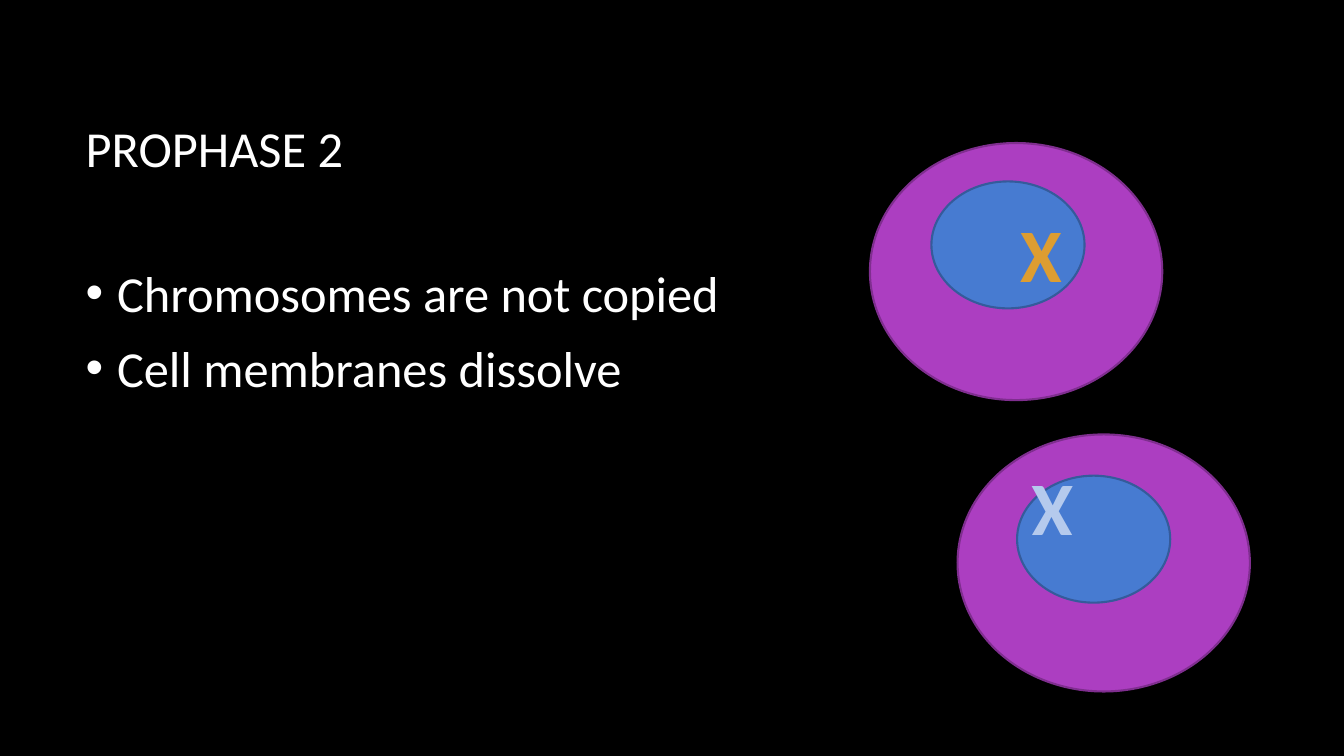
from lxml.etree import SubElement
from pptx import Presentation
from pptx.dml.color import RGBColor
from pptx.enum.shapes import MSO_SHAPE
from pptx.enum.text import MSO_ANCHOR, MSO_AUTO_SIZE, PP_ALIGN
from pptx.oxml.ns import qn
from pptx.util import Pt

BLACK = RGBColor(0x00, 0x00, 0x00)
WHITE = RGBColor(0xFF, 0xFF, 0xFF)
PURPLE = RGBColor(0xAC, 0x3E, 0xC1)
DARK_PURPLE = RGBColor(0x7F, 0x2E, 0x8F)
BLUE = RGBColor(0x47, 0x7B, 0xD1)
DARK_BLUE = RGBColor(0x35, 0x5B, 0x9B)
PALE_BLUE = RGBColor(0xB5, 0xCA, 0xED)
ORANGE = RGBColor(0xDD, 0x9D, 0x31)

CELL_SIZE = (208.8, 183.6)
NUCLEUS_SIZE = (109.4, 90.7)


def write(para, text, size=36, color=WHITE, bold=False, align=PP_ALIGN.LEFT, outline=None):
    """Write text into a paragraph with the given format."""
    para.alignment = align
    span = para.add_run()
    span.text = text
    font = span.font
    font.name, font.size, font.bold = "Calibri", Pt(size), bold
    font.color.rgb = color
    if outline:
        line_color, width = outline
        line = SubElement(font._element, qn("a:ln"), w=str(Pt(width)))
        fill = SubElement(line, qn("a:solidFill"))
        SubElement(fill, qn("a:srgbClr"), val=str(line_color))
        font._element.insert(0, line)


class Slide:
    """Hold the style and the current page, and draw its elements."""

    def __init__(self, deck):
        self.page = deck.slides.add_slide(deck.slide_layouts[5])
        background = self.page.background.fill
        background.solid()
        background.fore_color.rgb = BLACK

    def title(self, text, left, top, width, height):
        box = self.page.shapes.title
        box.left, box.top, box.width, box.height = map(Pt, (left, top, width, height))
        frame = box.text_frame
        frame.auto_size = MSO_AUTO_SIZE.NONE
        frame.vertical_anchor = MSO_ANCHOR.MIDDLE
        write(frame.paragraphs[0], text)

    def text_box(self, left, top, width, height):
        box = self.page.shapes.add_textbox(*map(Pt, (left, top, width, height)))
        box.text_frame.word_wrap = True
        return box

    def bullets(self, items, left, top, width, height, indent=22.5):
        frame = self.text_box(left, top, width, height).text_frame
        frame.vertical_anchor = MSO_ANCHOR.MIDDLE
        for index, item in enumerate(items):
            para = frame.add_paragraph() if index else frame.paragraphs[0]
            properties = para._p.get_or_add_pPr()
            properties.set("marL", str(Pt(indent)))
            properties.set("indent", str(-Pt(indent)))
            para.space_after = Pt(10)
            SubElement(properties, qn("a:buFont"), typeface="Arial")
            SubElement(properties, qn("a:buChar"), char="•")
            write(para, item)

    def ellipse(self, left, top, size, color, line_color):
        shape = self.page.shapes.add_shape(MSO_SHAPE.OVAL, *map(Pt, (left, top, *size)))
        shape.shadow.inherit = False
        shape.fill.solid()
        shape.fill.fore_color.rgb = color
        shape.line.color.rgb = line_color
        shape.line.width = Pt(1.5)

    def chromosome(self, left, top, width, color, outline, rotation):
        box = self.text_box(left, top, width, 72.7)
        box.rotation = rotation
        box.text_frame.auto_size = MSO_AUTO_SIZE.SHAPE_TO_FIT_TEXT
        write(box.text_frame.paragraphs[0], "X", size=54, color=color, bold=True,
              align=PP_ALIGN.CENTER, outline=outline)

    def cell(self, cell_at, nucleus_at, chromosome_at, color, outline, rotation=0):
        self.ellipse(*cell_at, CELL_SIZE, PURPLE, DARK_PURPLE)
        self.ellipse(*nucleus_at, NUCLEUS_SIZE, BLUE, DARK_BLUE)
        self.chromosome(*chromosome_at, color, outline, rotation)


def main():
    deck = Presentation()
    deck.slide_width, deck.slide_height = Pt(960), Pt(540)
    slide = Slide(deck)
    slide.title("PROPHASE 2", 54, 48.2, 797.8, 114.5)
    slide.bullets(["Chromosomes are not copied", "Cell membranes dissolve"],
                  54, 168.5, 517.7, 133.9)
    slide.cell((621.4, 102.2), (665.3, 129.6), (722.2, 144, 18.7), ORANGE, (BLACK, 0.75))
    slide.cell((684, 310.3), (726.5, 339.8), (748.1, 332.6, 25.9), PALE_BLUE, (BLUE, 1.75),
               rotation=180)
    deck.save("out.pptx")


if __name__ == "__main__":
    main()
